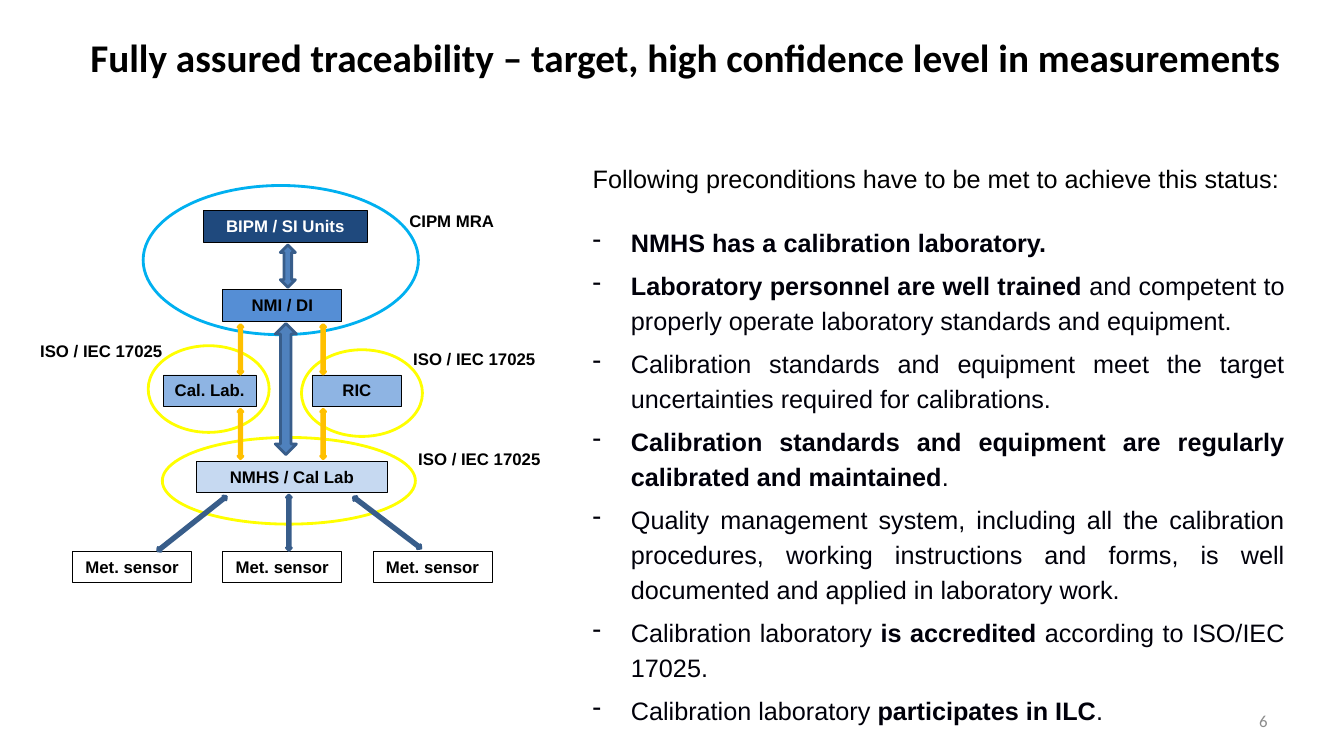
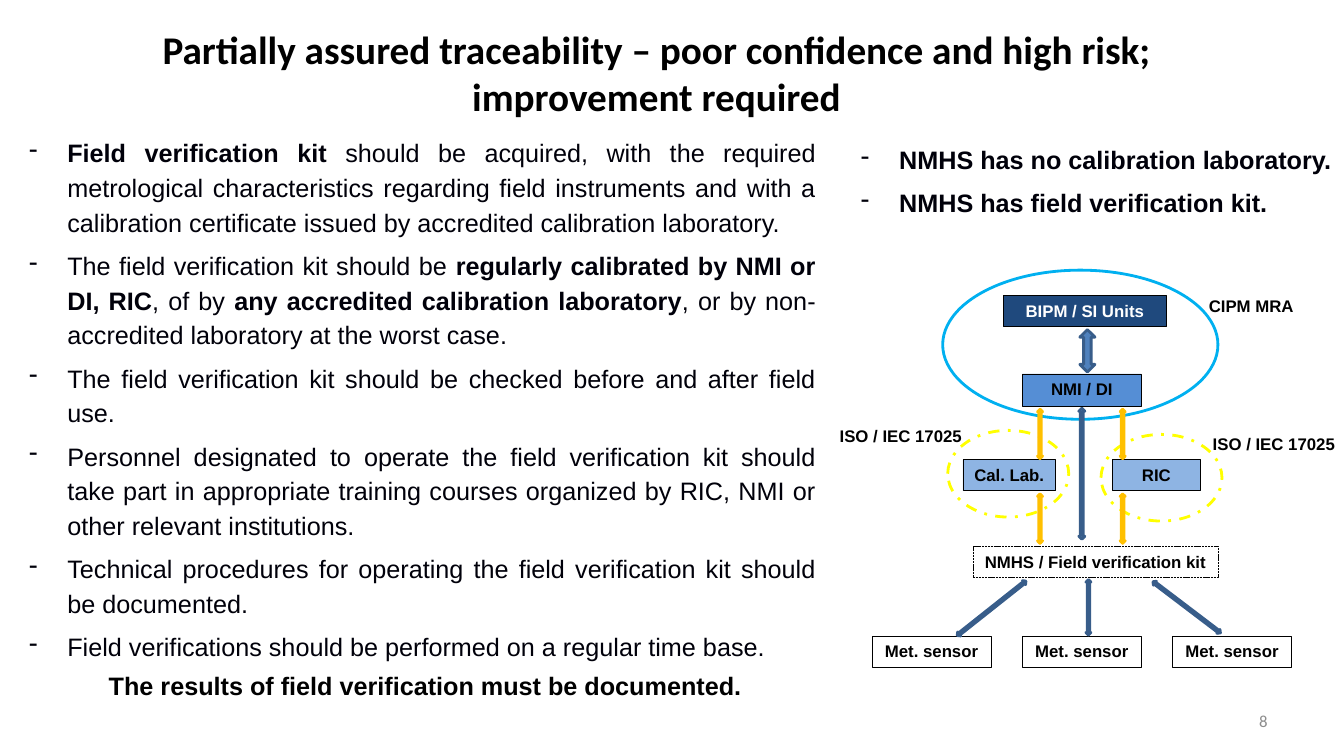
import pptx
import pptx.dml.color
import pptx.enum.dml
import pptx.enum.shapes
import pptx.enum.text
import pptx.oxml
import pptx.oxml.ns
import pptx.util
from pptx.util import Inches

COLORS = {
    "black": "000000", "ink": "00000A", "white": "FFFFFF", "grey": "8C8C8C",
    "navy": "1F497D", "blue": "558ED5", "sky": "8EB4E3", "pale": "C6D9F1",
    "arrow": "4F81BD", "arrow edge": "385D8A", "cyan": "00B0F0",
    "yellow": "FFFF00", "amber": "FFC000",
}
SHAPE = pptx.enum.shapes.MSO_SHAPE
DASH = pptx.enum.dml.MSO_LINE
ALIGN = pptx.enum.text.PP_ALIGN
MIDDLE = pptx.enum.text.MSO_ANCHOR.MIDDLE
TOP = pptx.enum.text.MSO_ANCHOR.TOP


def write(para, text, size, color, align, font="Arial", bold=False):
    """Add text run by run; each * switches bold on or off."""
    para.alignment = align
    for part in text.split("*"):
        if part:
            span = para.add_run()
            span.text = part
            span.font.name = font
            span.font.size = pptx.util.Pt(size)
            span.font.bold = bold
            span.font.color.rgb = pptx.dml.color.RGBColor.from_string(COLORS[color])
        bold = not bold


def add_preset(shapes, kind, place, fill, line, width=2, dash=None):
    shape = shapes.add_shape(kind, *map(Inches, place))
    shape.shadow.inherit = False
    if fill:
        shape.fill.solid()
        shape.fill.fore_color.rgb = pptx.dml.color.RGBColor.from_string(COLORS[fill])
    else:
        shape.fill.background()
    shape.line.color.rgb = pptx.dml.color.RGBColor.from_string(COLORS[line])
    shape.line.width = pptx.util.Pt(width)
    if dash:
        shape.line.dash_style = dash
    return shape


# Parts of the traceability diagram that both slides show
LABORATORIES = [
    ("BIPM / SI Units", (2.02, 2.09, 1.62, 0.31), "navy", "white", None),
    ("NMI / DI", (2.21, 2.87, 1.18, 0.32), "blue", "black", None),
    ("Cal. Lab.", (1.62, 3.72, 0.92, 0.31), "sky", "black", None),
    ("RIC", (3.1, 3.72, 0.88, 0.31), "sky", "black", None),
]
SENSORS = [("Met. sensor", (0.72 + 1.49 * column, 5.47, 1.18, 0.31), "white", "black", None)
           for column in range(3)]
LABELS = [
    ("CIPM MRA ", (3.84, 2.04, 1.32, 0.31)),
    ("ISO / IEC 17025", (3.93, 3.41, 1.55, 0.31)),
    ("ISO / IEC 17025", (0.23, 3.33, 1.55, 0.31)),
]
LAB_ARROWS = [(left, top, 0.05, 0.49) for left in (2.36, 3.18) for top in (3.22, 4.06)]
SENSOR_ARROWS = [
    ((1.47, 5.17, 0.87, 0.05), 321.6),
    ((2.59, 5.16, 0.55, 0.05), 90),
    ((3.42, 5.16, 0.84, 0.05), 37.2),
]

SLIDES = [
    {
        "number": "6",
        "title": ["Fully assured traceability – target, high confidence level in measurements"],
        "title place": (0.55, -0.06, 12.49, 1.25),
        "shift": (0, 0),
        "ring dash": None,
        "extra rings": [(1.61, 4.34, 2.51, 0.86)],
        "extra labels": [("ISO / IEC 17025", (3.98, 4.4, 1.55, 0.31))],
        "station": ("NMHS / Cal Lab", (1.95, 4.58, 1.89, 0.31), "pale", "black", None),
        "main arrow": (2.73, 3.21, 0.21, 1.3),
        "texts": [
            ((5.78, 1.57, 7.06, 5.74), [
                ("intro", "Following preconditions have to be met to achieve this status:"),
                ("item", "*NMHS has a calibration laboratory."),
                ("item", "*Laboratory personnel are well trained *and competent to properly "
                         "operate laboratory standards and equipment."),
                ("item", "Calibration standards and equipment meet the target uncertainties "
                         "required for calibrations."),
                ("item", "*Calibration standards and equipment are regularly calibrated and "
                         "maintained*."),
                ("item", "Quality management system, including all the calibration procedures, "
                         "working instructions and forms, is well documented and applied in "
                         "laboratory work."),
                ("item", "Calibration laboratory *is accredited *according to ISO/IEC 17025."),
                ("item", "Calibration laboratory *participates in ILC*."),
            ]),
        ],
    },
    {
        "number": "8",
        "title": ["Partially assured traceability – poor confidence and high risk;",
                  "improvement required"],
        "title place": (0.35, 0.09, 12.32, 1.25),
        "shift": (7.93, 0.84),
        "ring dash": DASH.DASH_DOT,
        "extra rings": [],
        "extra labels": [],
        "station": ("NMHS / Field verification kit", (1.72, 4.58, 2.43, 0.31), None, "black",
                    DASH.SQUARE_DOT),
        "main arrow": (2.77, 3.21, 0.06, 1.3),
        "texts": [
            ((8.44, 1.34, 4.9, 0.88), [
                ("item", "*NMHS has no calibration laboratory."),
                ("item", "*NMHS has field verification kit."),
            ]),
            ((0.19, 1.27, 8, 5.79), [
                ("item", "*Field verification kit *should be acquired, with the required "
                         "metrological characteristics regarding field instruments and with a "
                         "calibration certificate issued by accredited calibration laboratory."),
                ("item", "The field verification kit should be *regularly calibrated by NMI or "
                         "DI, RIC*, of by *any accredited calibration laboratory*, or by "
                         "non-accredited laboratory at the worst case."),
                ("item", "The field verification kit should be checked before and after field "
                         "use."),
                ("item", "Personnel designated to operate the field verification kit should "
                         "take part in appropriate training courses organized by RIC, NMI or "
                         "other relevant institutions."),
                ("item", "Technical procedures for operating the field verification kit should "
                         "be documented."),
                ("item", "Field verifications should be performed on a regular time base."),
                ("closing", "*The results of field verification must be documented."),
            ]),
        ],
    },
]

deck = pptx.Presentation()
deck.slide_width, deck.slide_height = Inches(13.33), Inches(7.5)

for content in SLIDES:
    page = deck.slides.add_slide(deck.slide_layouts[5])

    title = page.shapes.title
    title.left, title.top, title.width, title.height = map(Inches, content["title place"])
    title.text_frame.vertical_anchor = MIDDLE
    para = title.text_frame.paragraphs[0]
    for index, line in enumerate(content["title"]):
        if index:
            para.add_line_break()
        write(para, line, 28, "black", ALIGN.CENTER, "Calibri", True)

    box = page.shapes.add_textbox(Inches(9.56), Inches(6.95), Inches(3.11), Inches(0.4))
    box.text_frame.word_wrap = True
    box.text_frame.vertical_anchor = MIDDLE
    write(box.text_frame.paragraphs[0], content["number"], 12, "grey", ALIGN.RIGHT, "Calibri")

    # Diagram, drawn in one group and then moved into place
    diagram = page.shapes.add_group_shape()
    for place in content["extra rings"] + [(1.47, 3.43, 1.2, 0.86), (2.99, 3.47, 1.2, 0.86)]:
        add_preset(diagram.shapes, SHAPE.OVAL, place, None, "yellow", dash=content["ring dash"])
    add_preset(diagram.shapes, SHAPE.OVAL, (1.42, 1.84, 2.73, 1.48), None, "cyan")

    for name, place, fill, color, dash in LABORATORIES + [content["station"]] + SENSORS:
        box = add_preset(diagram.shapes, SHAPE.RECTANGLE, place, fill, "black", 0.5, dash)
        box.text_frame.word_wrap = False
        box.text_frame.vertical_anchor = TOP
        write(box.text_frame.paragraphs[0], name, 12, color, ALIGN.CENTER, bold=True)

    for name, place in LABELS + content["extra labels"]:
        box = diagram.shapes.add_textbox(*map(Inches, place))
        box.text_frame.word_wrap = True
        write(box.text_frame.paragraphs[0], name, 12, "black", ALIGN.CENTER, bold=True)

    for place in [(2.78, 2.43, 0.15, 0.42), content["main arrow"]]:
        add_preset(diagram.shapes, SHAPE.UP_DOWN_ARROW, place, "arrow", "arrow edge")
    for place in LAB_ARROWS:
        add_preset(diagram.shapes, SHAPE.UP_DOWN_ARROW, place, "arrow", "amber")
    for place, angle in SENSOR_ARROWS:
        arrow = add_preset(diagram.shapes, SHAPE.LEFT_RIGHT_ARROW, place, "arrow", "arrow edge")
        arrow.rotation = angle

    diagram.left += Inches(content["shift"][0])
    diagram.top += Inches(content["shift"][1])

    for place, paragraphs in content["texts"]:
        box = page.shapes.add_textbox(*map(Inches, place))
        frame = box.text_frame
        frame.word_wrap = True
        for index, (role, text) in enumerate(paragraphs):
            para = frame.add_paragraph() if index else frame.paragraphs[0]
            if role == "item":
                properties = para._p.get_or_add_pPr()
                properties.set("marL", str(Inches(0.38)))
                properties.set("indent", str(Inches(-0.38)))
                for bullet in (f'<a:buClr %s><a:srgbClr val="{COLORS["ink"]}"/></a:buClr>',
                               '<a:buChar %s char="-"/>'):
                    properties.append(pptx.oxml.parse_xml(bullet % pptx.oxml.ns.nsdecls("a")))
                para.line_spacing = 1.15
                para.space_after = pptx.util.Pt(6)
                write(para, text, 18, "ink", ALIGN.JUSTIFY)
            elif role == "intro":
                para.space_after = pptx.util.Pt(21)
                write(para, text, 18, "black", ALIGN.JUSTIFY)
            else:
                para._p.get_or_add_pPr().set("marL", str(Inches(0.79)))
                write(para, text, 18, "black", ALIGN.LEFT)

deck.save("out.pptx")
